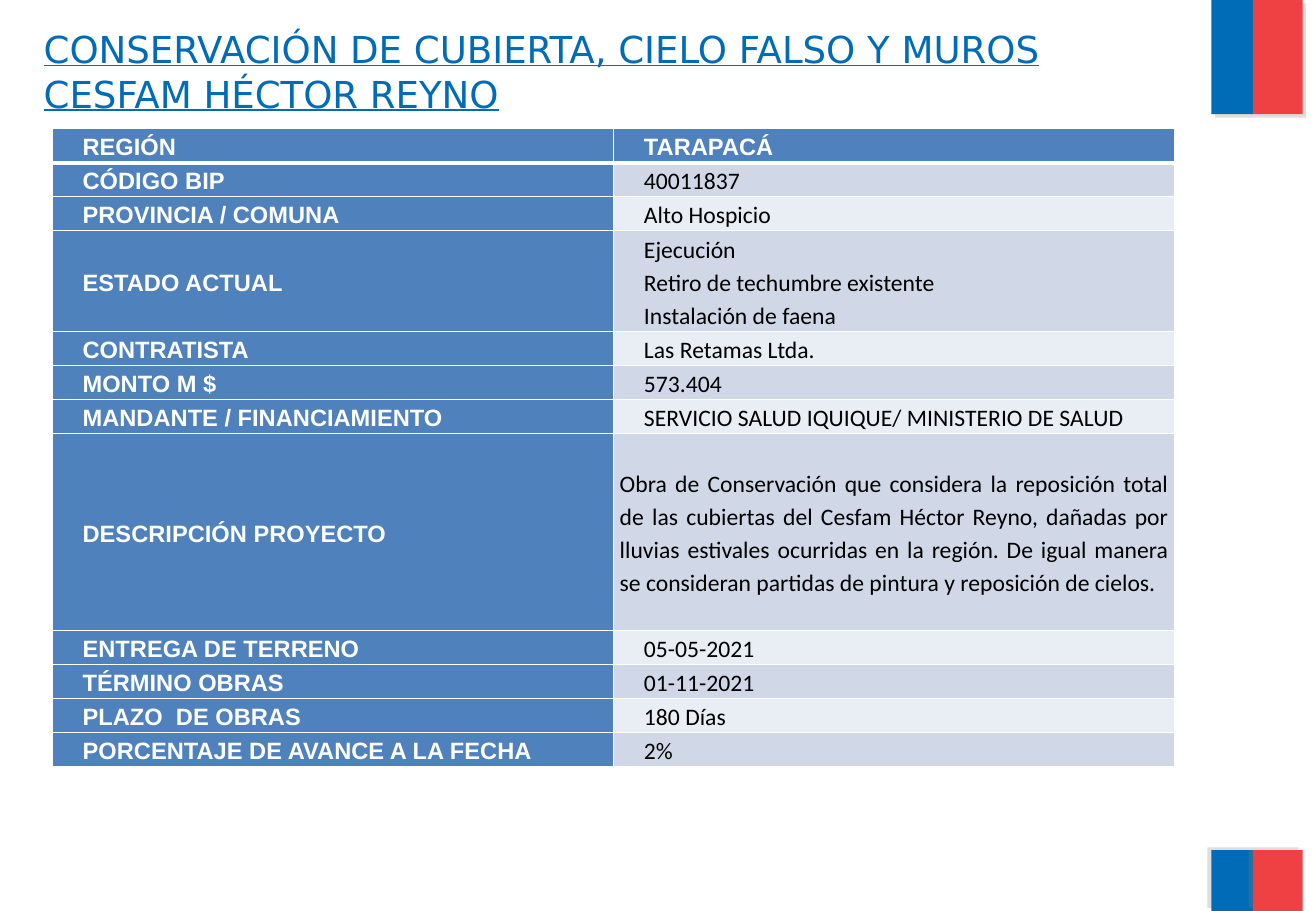
from dataclasses import dataclass

from lxml.etree import SubElement
from pptx import Presentation
from pptx.dml.color import RGBColor
from pptx.enum.shapes import MSO_SHAPE
from pptx.enum.text import MSO_ANCHOR, MSO_AUTO_SIZE, PP_ALIGN
from pptx.oxml.ns import qn
from pptx.slide import Slide
from pptx.table import _Cell as Cell
from pptx.util import Inches, Pt

FLAG_BLUE = RGBColor(0x00, 0x6C, 0xB7)
FLAG_RED = RGBColor(0xEF, 0x41, 0x44)
SHADOW_GRAY = RGBColor(0x80, 0x80, 0x80)
HEADER_BLUE = RGBColor(0x4F, 0x81, 0xBD)
BAND_DARK = RGBColor(0xD0, 0xD8, 0xE8)
BAND_LIGHT = RGBColor(0xE9, 0xED, 0xF4)
WHITE = RGBColor(0xFF, 0xFF, 0xFF)
BLACK = RGBColor(0x00, 0x00, 0x00)

COLUMN_WIDTH = 4.62
ROW_HEIGHT = 0.28
TEXT_INDENT = 0.2


@dataclass
class FlagBlock:
    left: float
    top: float
    width: float
    height: float
    color: RGBColor
    shadow_angle: int


@dataclass
class ProjectField:
    label: str
    value: str
    height: float = ROW_HEIGHT
    indent: float = TEXT_INDENT


@dataclass
class CellStyle:
    font: str
    color: RGBColor
    bold: bool
    align: PP_ALIGN


LABEL_STYLE = CellStyle("Arial", WHITE, True, PP_ALIGN.LEFT)
VALUE_STYLE = CellStyle("Calibri", BLACK, False, PP_ALIGN.JUSTIFY)

FLAG_BLOCKS = [
    FlagBlock(9.97, -0.01, 0.34, 0.95, FLAG_BLUE, 45),
    FlagBlock(10.31, 0, 0.41, 0.94, FLAG_RED, 45),
    FlagBlock(9.97, 7, 0.34, 0.5, FLAG_BLUE, 215),
    FlagBlock(10.31, 7, 0.41, 0.5, FLAG_RED, 215),
]

PROJECT_FIELDS = [
    ProjectField("REGIÓN", "TARAPACÁ"),
    ProjectField("CÓDIGO BIP", "40011837"),
    ProjectField("PROVINCIA / COMUNA", "Alto Hospicio"),
    ProjectField(
        "ESTADO ACTUAL",
        "Ejecución\nRetiro de techumbre existente\nInstalación de faena",
        height=0.83,
    ),
    ProjectField("CONTRATISTA", "Las Retamas Ltda."),
    ProjectField("MONTO M $", "573.404"),
    ProjectField("MANDANTE / FINANCIAMIENTO", "SERVICIO SALUD IQUIQUE/ MINISTERIO DE SALUD"),
    ProjectField(
        "DESCRIPCIÓN PROYECTO",
        "Obra de Conservación que considera la reposición total de las cubiertas "
        "del Cesfam Héctor Reyno, dañadas por lluvias estivales ocurridas en la "
        "región. De igual manera se consideran partidas de pintura y reposición "
        "de cielos.",
        height=1.62,
        indent=0,
    ),
    ProjectField("ENTREGA DE TERRENO", "05-05-2021"),
    ProjectField("TÉRMINO OBRAS", "01-11-2021"),
    ProjectField("PLAZO  DE OBRAS", "180 Días"),
    ProjectField("PORCENTAJE DE AVANCE A LA FECHA", "2%"),
]


def add_flag_block(slide: Slide, block: FlagBlock) -> None:
    sp = slide.shapes.add_shape(
        MSO_SHAPE.RECTANGLE,
        Inches(block.left), Inches(block.top), Inches(block.width), Inches(block.height),
    )
    sp.fill.solid()
    sp.fill.fore_color.rgb = block.color
    sp.line.fill.background()
    sp.shadow.inherit = False
    effects = sp.element.spPr.find(qn("a:effectLst"))
    shadow = SubElement(
        effects, qn("a:outerShdw"),
        dist=str(Pt(3)), dir=str(block.shadow_angle * 60000), algn="ctr", rotWithShape="0",
    )
    color = SubElement(shadow, qn("a:srgbClr"), val=str(SHADOW_GRAY))
    SubElement(color, qn("a:alpha"), val="25000")


def add_title(slide: Slide, text: str) -> None:
    title = slide.shapes.title
    title.left, title.top = Inches(0.26), Inches(0.17)
    title.width, title.height = Inches(9.1), Inches(0.65)
    tf = title.text_frame
    tf.text = text
    tf.word_wrap = True
    tf.auto_size = MSO_AUTO_SIZE.NONE
    tf.vertical_anchor = MSO_ANCHOR.TOP
    p = tf.paragraphs[0]
    p.alignment = PP_ALIGN.LEFT
    font = p.runs[0].font
    font.name = "DejaVu Sans"
    font.size = Pt(22)
    font.underline = True
    font.color.rgb = FLAG_BLUE


def set_borders(cell: Cell, top: float, bottom: float) -> None:
    tc_pr = cell._tc.get_or_add_tcPr()
    for side, width in (("lnL", 1), ("lnR", 1), ("lnT", top), ("lnB", bottom)):
        line = SubElement(tc_pr, qn(f"a:{side}"), w=str(Pt(width)))
        fill = SubElement(line, qn("a:solidFill"))
        SubElement(fill, qn("a:srgbClr"), val=str(WHITE))


def fill_cell(cell: Cell, text: str, style: CellStyle, fill: RGBColor, indent: float) -> None:
    cell.fill.solid()
    cell.fill.fore_color.rgb = fill
    cell.vertical_anchor = MSO_ANCHOR.MIDDLE
    cell.margin_left = cell.margin_right = Inches(0.05)
    cell.margin_top = cell.margin_bottom = 0
    cell.text_frame.text = text
    for p in cell.text_frame.paragraphs:
        p.alignment = style.align
        p.line_spacing = 1.15
        p._p.get_or_add_pPr().set("indent", str(Inches(indent)))
        font = p.runs[0].font
        font.name = style.font
        font.size = Pt(14)
        font.bold = style.bold
        font.color.rgb = style.color


def add_project_table(slide: Slide, fields: list[ProjectField]) -> None:
    table = slide.shapes.add_table(
        len(fields), 2, Inches(0.43), Inches(1.06),
        Inches(2 * COLUMN_WIDTH), Inches(sum(field.height for field in fields)),
    ).table
    for column in table.columns:
        column.width = Inches(COLUMN_WIDTH)
    for i, field in enumerate(fields):
        table.rows[i].height = Inches(field.height)
        label, value = table.cell(i, 0), table.cell(i, 1)
        for cell in (label, value):
            set_borders(cell, top=3 if i == 1 else 1, bottom=3 if i == 0 else 1)
        fill_cell(label, field.label, LABEL_STYLE, HEADER_BLUE, TEXT_INDENT)
        if i == 0:
            value_style, value_fill = LABEL_STYLE, HEADER_BLUE
        else:
            value_style, value_fill = VALUE_STYLE, BAND_DARK if i % 2 else BAND_LIGHT
        fill_cell(value, field.value, value_style, value_fill, field.indent)


def main() -> None:
    prs = Presentation()
    prs.slide_width, prs.slide_height = Inches(10.83), Inches(7.5)
    slide = prs.slides.add_slide(prs.slide_layouts[5])
    for block in FLAG_BLOCKS:
        add_flag_block(slide, block)
    add_title(slide, "CONSERVACIÓN DE CUBIERTA, CIELO FALSO Y MUROS CESFAM HÉCTOR REYNO")
    add_project_table(slide, PROJECT_FIELDS)
    prs.save("out.pptx")


if __name__ == "__main__":
    main()
